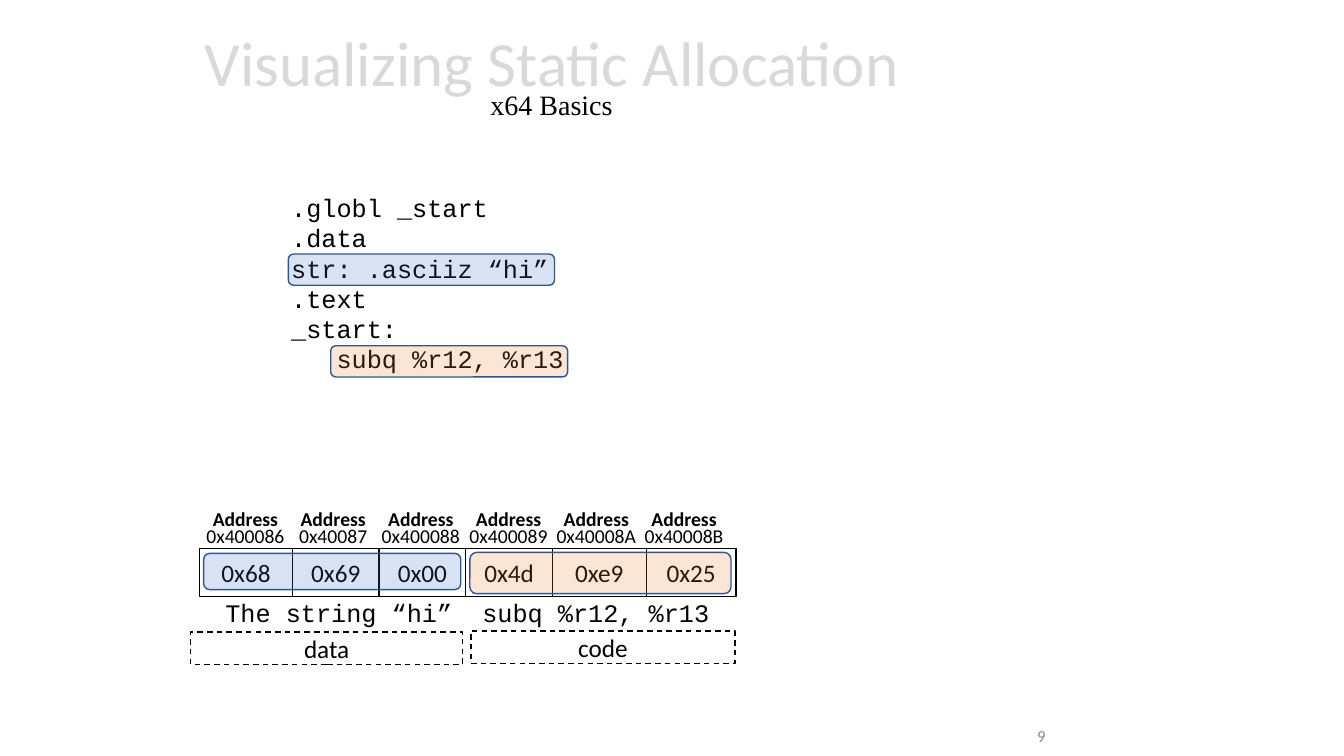
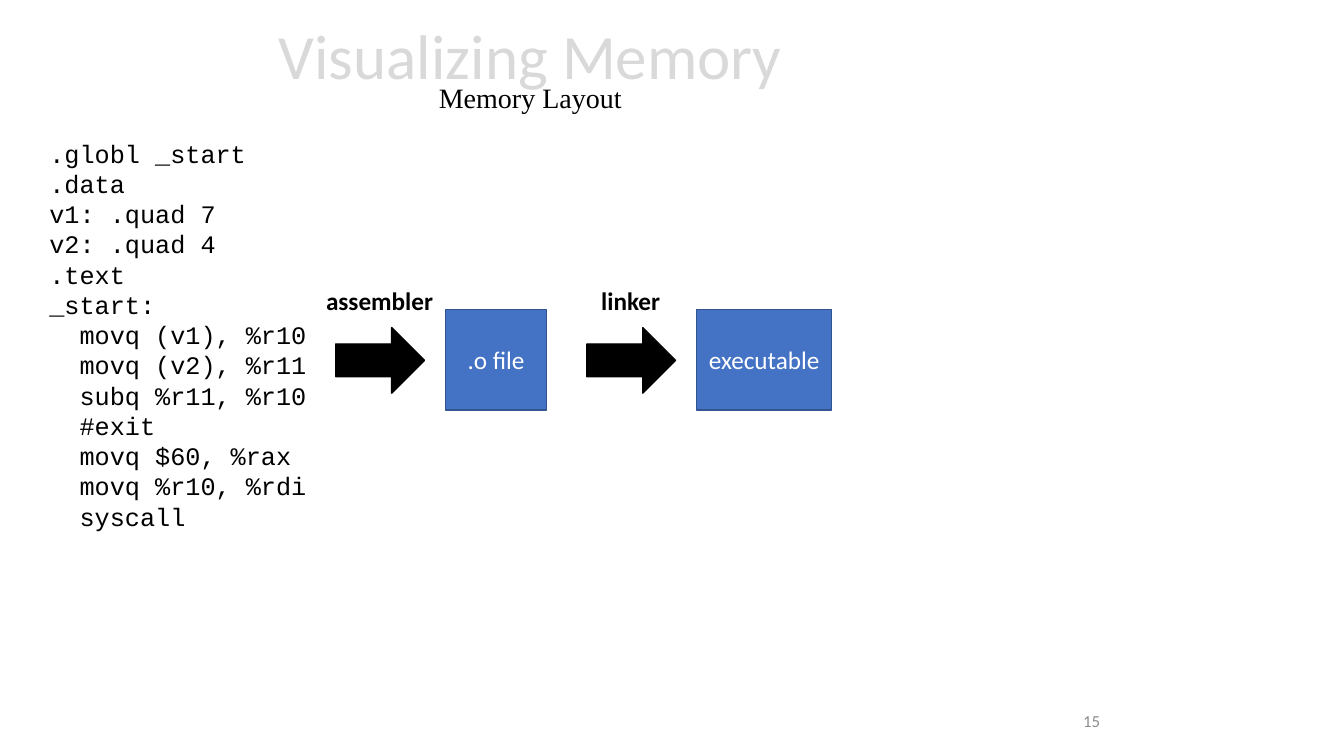
"""Build two slides on static allocation and memory layout."""
from lxml import etree
from pptx import Presentation
from pptx import util as u
from pptx.dml.color import RGBColor
from pptx.enum import dml, shapes, text
from pptx.oxml.ns import qn

BLACK, WHITE, PALE, GREY = "000000", "FFFFFF", "D9D9D9", "8C8C8C"
BLUE, ORANGE, EDGE = "4472C4", "ED7D31", "325491"
SANS, SERIF, MONO = "Calibri", "Times New Roman", "Courier New"
CODE_CHAR = 0.15
LEFT, CENTER, RIGHT = text.PP_ALIGN.LEFT, text.PP_ALIGN.CENTER, text.PP_ALIGN.RIGHT
RECT = shapes.MSO_SHAPE.RECTANGLE
ROUND = shapes.MSO_SHAPE.ROUNDED_RECTANGLE
ARROW = shapes.MSO_SHAPE.RIGHT_ARROW


def color(value):
    """Turn a hex string into a colour."""
    return RGBColor.from_string(value)


def inches(values):
    """Turn numbers into lengths."""
    return [u.Inches(value) for value in values]


def style(span, size, font=SANS, ink=BLACK, bold=False):
    """Format one run."""
    span.font.size = u.Pt(size)
    span.font.name = font
    span.font.bold = bold
    span.font.color.rgb = color(ink)


class Deck:
    """Hold the presentation, its style and the current slide."""

    def __init__(self):
        """Start an empty wide presentation."""
        self.deck = Presentation()
        self.deck.slide_width, self.deck.slide_height = inches((13.33, 7.5))
        self.page = None

    def start(self, title, subtitle, title_at, number, number_at):
        """Add a slide with its two-line title and number."""
        self.page = self.deck.slides.add_slide(self.deck.slide_layouts[5])
        box = self.page.shapes.title
        box.left, box.top, box.width, box.height = inches(title_at)
        frame = box.text_frame
        frame.text = f"{title}\v{subtitle}"
        frame.auto_size = text.MSO_AUTO_SIZE.NONE
        frame.vertical_anchor = text.MSO_ANCHOR.MIDDLE
        para = frame.paragraphs[0]
        para.alignment = CENTER
        para.line_spacing = 0.7
        heading, topic = para.runs
        style(heading, 45, ink=PALE)
        style(topic, 20, SERIF)
        box = self.label(number, number_at, 12, ink=GREY, align=RIGHT, inset=0.1)
        box.text_frame.vertical_anchor = text.MSO_ANCHOR.MIDDLE

    def label(self, words, at, size=18, font=SANS, ink=BLACK, bold=False,
              align=CENTER, inset=0):
        """Add a text box with one paragraph per line."""
        box = self.page.shapes.add_textbox(*inches(at))
        frame = box.text_frame
        frame.word_wrap = True
        frame.margin_left = frame.margin_right = u.Inches(inset)
        frame.text = words
        for para in frame.paragraphs:
            para.alignment = align
            for span in para.runs:
                style(span, size, font, ink, bold)
        return box

    def listing(self, lines, at):
        """Add code whose leading spaces become paragraph indents."""
        words = "\n".join(line.lstrip() for line in lines)
        box = self.label(words, at, font=MONO, align=LEFT, inset=0.1)
        for line, para in zip(lines, box.text_frame.paragraphs):
            depth = len(line) - len(line.lstrip())
            margin = u.Inches(depth * CODE_CHAR)
            para._p.get_or_add_pPr().set("marL", str(margin))

    def shape(self, kind, at, fill=WHITE, line=BLACK, words="", ink=BLACK, dashed=False):
        """Add a filled and outlined shape with centred text."""
        box = self.page.shapes.add_shape(kind, *inches(at))
        box.shadow.inherit = False
        box.fill.solid()
        box.fill.fore_color.rgb = color(fill)
        box.line.color.rgb = color(line)
        box.line.width = u.Pt(1)
        if dashed:
            box.line.dash_style = dml.MSO_LINE.DASH
        if words:
            box.text_frame.text = words
            box.text_frame.vertical_anchor = text.MSO_ANCHOR.MIDDLE
            para = box.text_frame.paragraphs[0]
            para.alignment = CENTER
            style(para.runs[0], 18, ink=ink)
        return box

    def highlight(self, at, fill):
        """Add a see-through rounded marker."""
        box = self.shape(ROUND, at, fill, EDGE)
        tint = box._element.spPr.find(qn("a:solidFill")).find(qn("a:srgbClr"))
        etree.SubElement(tint, qn("a:alpha")).set("val", "20000")

    def step(self, tool, left, result, width):
        """Add a named arrow and the file it leads to."""
        self.label(tool, (left - 0.2, 2.78, 1.27, 0.4), bold=True)
        self.shape(ARROW, (left, 3.25, 0.88, 0.65), BLACK)
        self.shape(RECT, (left + 1.09, 3.07, width, 1), BLUE, EDGE, result, WHITE)


def static_allocation(deck):
    """Show how data and code fill memory."""
    deck.start("Visualizing Static Allocation", "x64 Basics", (1.16, 0.09, 8.62, 1.45),
               "9", (8.22, 7.1, 2.25, 0.4))
    deck.listing([".globl _start", ".data", "str: .asciiz “hi”", ".text", "_start:",
                  "   subq %r12, %r13"], (2.79, 1.86, 5.22, 1.92))
    deck.highlight((3.28, 3.43, 2.35, 0.31), ORANGE)
    deck.highlight((2.86, 2.52, 2.64, 0.31), BLUE)

    edges = (1.98, 2.9, 3.76, 4.62, 5.48, 6.41, 7.3)
    memory = (("0x400086", "0x68"), ("0x40087", "0x69"), ("0x400088", "0x00"),
              ("0x400089", "0x4d"), ("0x40008A", "0xe9"), ("0x40008B", "0x25"))
    for index, (address, value) in enumerate(memory):
        left, right = edges[index:index + 2]
        deck.shape(RECT, (left, 5.44, right - left, 0.48), words=value)
        label_left = 1.97 + 0.87 * index
        deck.label("Address", (label_left, 4.98, 0.93, 0.34), 14, bold=True)
        deck.label(address, (label_left, 5.15, 0.93, 0.34), 14)

    deck.shape(RECT, (1.89, 6.27, 2.7, 0.32), words="data", dashed=True)
    deck.shape(RECT, (4.67, 6.26, 2.62, 0.32), words="code", dashed=True)
    for left, caption in ((2.13, "The string “hi”"), (4.68, "subq %r12, %r13")):
        deck.label(caption, (left, 5.88, 2.46, 0.4), font=MONO)
    deck.highlight((4.66, 5.48, 2.59, 0.41), ORANGE)
    deck.highlight((2.02, 5.49, 2.55, 0.36), BLUE)


def memory_layout(deck):
    """Show the way from source code to executable."""
    deck.start("Visualizing Memory", "Memory Layout", (0.26, 0.02, 10, 1.45),
               "15", (8.01, 6.95, 3, 0.4))
    deck.listing([".globl _start", ".data", "v1: .quad 7", "v2: .quad 4", ".text",
                  "_start:", "  movq (v1), %r10", "  movq (v2), %r11",
                  "  subq %r11, %r10", "  #exit", "  movq $60, %rax",
                  "  movq %r10, %rdi", "  syscall"], (0.39, 1.32, 3.91, 4.04))
    deck.step("assembler", 3.33, ".o file", 1)
    deck.step("linker", 5.82, "executable", 1.34)


def main():
    """Build and save the slides."""
    deck = Deck()
    static_allocation(deck)
    memory_layout(deck)
    deck.deck.save("out.pptx")


if __name__ == "__main__":
    main()
